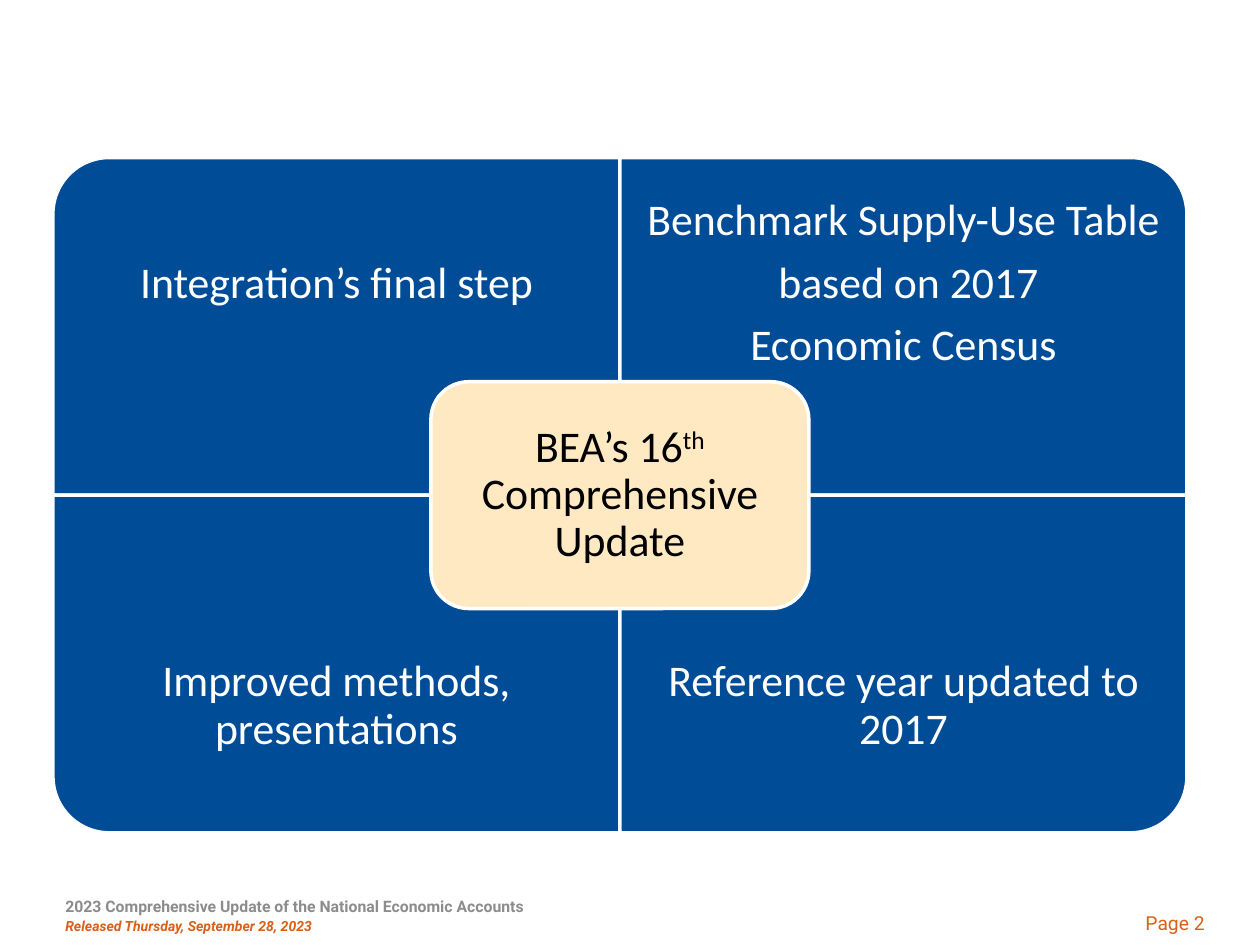
"""Build the four-quadrant summary slide of the comprehensive update."""
from dataclasses import dataclass

from pptx import Presentation
from pptx.dml.color import RGBColor
from pptx.enum import shapes, text
from pptx.util import Inches, Pt

SLIDE_W, SLIDE_H = 10, 7.5
GRID_LEFT, GRID_TOP = 0.42, 1.25
CELL_W, CELL_H = 4.5, 2.68
LABEL_SHARE = 0.75
BLUE, CREAM, WHITE, BLACK = "004C97", "FFE9C3", "FFFFFF", "000000"
ORANGE, GRAY = "D86018", "8C8C8C"
CENTER, LEFT, RIGHT = text.PP_ALIGN.CENTER, text.PP_ALIGN.LEFT, text.PP_ALIGN.RIGHT
MIDDLE, TOP = text.MSO_ANCHOR.MIDDLE, text.MSO_ANCHOR.TOP


@dataclass(frozen=True)
class Box:
    """A rectangle in inches."""
    left: float
    top: float
    width: float
    height: float

    def lengths(self) -> tuple:
        """Return the rectangle as slide lengths."""
        return tuple(Inches(v) for v in (self.left, self.top, self.width, self.height))


@dataclass(frozen=True)
class Words:
    """A run of text and its look."""
    content: str
    size: float = 25
    color: str = WHITE
    face: str = "Calibri"
    bold: bool = False
    italic: bool = False
    raised: bool = False


@dataclass(frozen=True)
class Quadrant:
    """A grid cell, the turn of its rounded corner, and its lines."""
    column: int
    row: int
    turn: int
    lines: tuple


QUADRANTS = (
    Quadrant(0, 0, 270, ("Integration’s final step",)),
    Quadrant(1, 0, 0, ("Benchmark Supply-Use Table", " based on 2017", "Economic Census")),
    Quadrant(0, 1, 180, ("Improved methods, presentations",)),
    Quadrant(1, 1, 90, ("Reference year updated to 2017",)),
)


def rgb(color: str) -> RGBColor:
    """Turn a hex string into a colour."""
    return RGBColor.from_string(color)


def add_panel(slide, kind, box: Box, fill: str, turn: int = 0) -> None:
    """Draw a filled panel with a white outline."""
    panel = slide.shapes.add_shape(kind, *box.lengths())
    panel.rotation = turn
    panel.shadow.inherit = False
    panel.fill.solid()
    panel.fill.fore_color.rgb = rgb(fill)
    panel.line.color.rgb = rgb(WHITE)
    panel.line.width = Pt(2)


def add_words(slide, box: Box, paragraphs: list, align=CENTER, anchor=MIDDLE,
              inset: tuple = (0.1, 0.05), leading: float = 0.9, after: float = 8.75) -> None:
    """Write paragraphs, each a list of runs, into a text box."""
    frame = slide.shapes.add_textbox(*box.lengths()).text_frame
    frame.word_wrap = True
    frame.vertical_anchor = anchor
    frame.margin_left = frame.margin_right = Inches(inset[0])
    frame.margin_top = frame.margin_bottom = Inches(inset[1])
    for index, runs in enumerate(paragraphs):
        paragraph = frame.add_paragraph() if index else frame.paragraphs[0]
        paragraph.alignment = align
        paragraph.line_spacing = leading
        paragraph.space_after = Pt(after)
        for words in runs:
            run = paragraph.add_run()
            run.text = words.content
            run.font.name = words.face
            run.font.size = Pt(words.size)
            run.font.bold = words.bold
            run.font.italic = words.italic
            run.font.color.rgb = rgb(words.color)
            if words.raised:
                run._r.get_or_add_rPr().set("baseline", "30000")


def add_quadrant(slide, quadrant: Quadrant) -> None:
    """Draw one quadrant with its label towards the outer edge."""
    left = GRID_LEFT + quadrant.column * CELL_W
    top = GRID_TOP + quadrant.row * CELL_H
    width, height = (CELL_H, CELL_W) if quadrant.turn % 180 else (CELL_W, CELL_H)
    panel = Box(left + (CELL_W - width) / 2, top + (CELL_H - height) / 2, width, height)
    add_panel(slide, shapes.MSO_SHAPE.ROUND_1_RECTANGLE, panel, BLUE, quadrant.turn)
    label_top = top + quadrant.row * (1 - LABEL_SHARE) * CELL_H
    label = Box(left, label_top, CELL_W, LABEL_SHARE * CELL_H)
    add_words(slide, label, [[Words(line)] for line in quadrant.lines], inset=(0.19, 0.19))


def add_hub(slide) -> None:
    """Draw the centre panel where the quadrants meet."""
    width, height, pad = 3, 1.8, 0.09
    left, top = GRID_LEFT + CELL_W - width / 2, GRID_TOP + CELL_H - height / 2
    add_panel(slide, shapes.MSO_SHAPE.ROUNDED_RECTANGLE, Box(left, top, width, height), CREAM)
    title = [Words("BEA’s 16", color=BLACK), Words("th", color=BLACK, raised=True),
             Words(" Comprehensive Update", color=BLACK)]
    inner = Box(left + pad, top + pad, width - 2 * pad, height - 2 * pad)
    add_words(slide, inner, [title], inset=(0.1, 0.1))


def add_footer(slide) -> None:
    """Write the release line and the page number."""
    release = [
        [Words("2023 Comprehensive Update of the National Economic Accounts",
               9, GRAY, "Roboto", bold=True)],
        [Words("Released Thursday, September 28, 2023",
               8, ORANGE, "Roboto", bold=True, italic=True)],
    ]
    add_words(slide, Box(GRID_LEFT, 7.07, 7.25, 0.43), release, LEFT, TOP, leading=1.0, after=1.1)
    add_words(slide, Box(8.58, 7.16, 1.08, 0.32), [[Words("Page 2", 11, ORANGE, "Roboto")]],
              RIGHT, leading=1.0, after=0)


def main() -> None:
    """Build and save the slide."""
    deck = Presentation()
    deck.slide_width, deck.slide_height = Inches(SLIDE_W), Inches(SLIDE_H)
    slide = deck.slides.add_slide(deck.slide_layouts[6])
    add_footer(slide)
    for quadrant in QUADRANTS:
        add_quadrant(slide, quadrant)
    add_hub(slide)
    deck.save("out.pptx")


if __name__ == "__main__":
    main()
